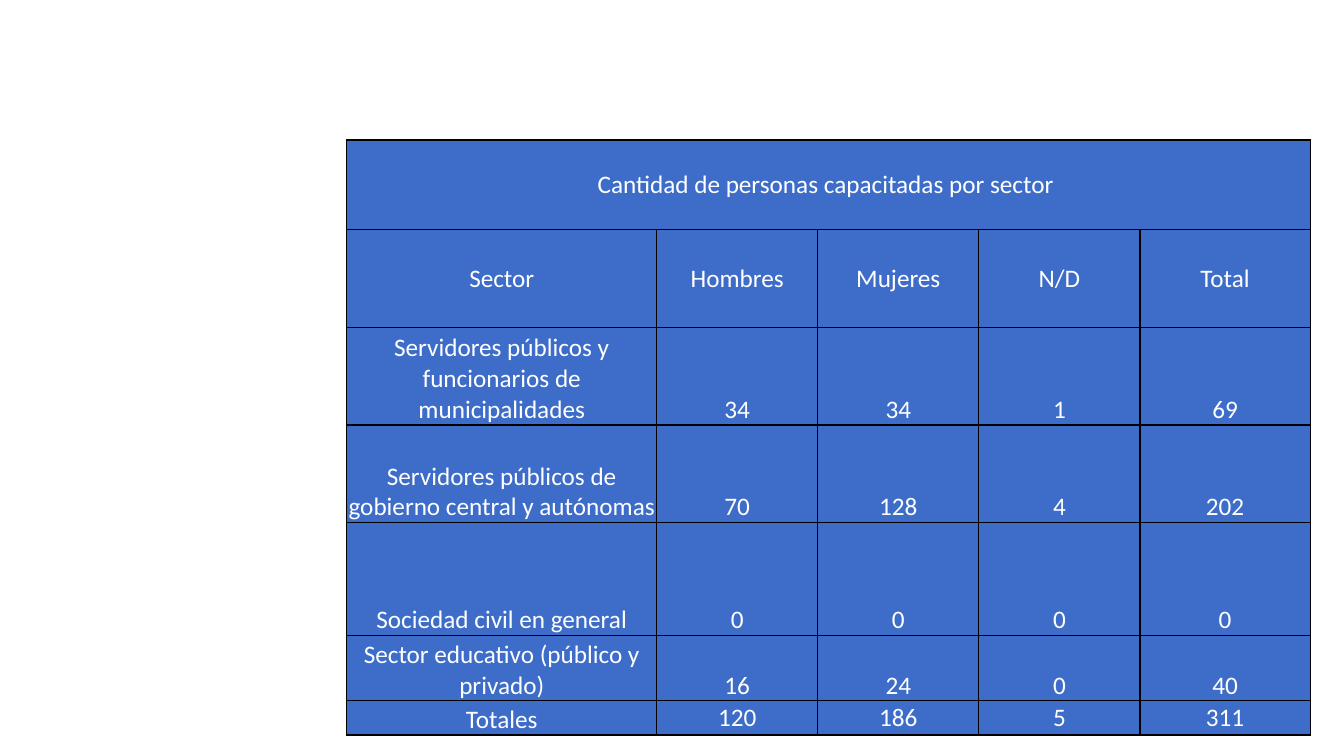
from dataclasses import dataclass

from lxml import etree
from pptx import Presentation
from pptx.dml.color import RGBColor
from pptx.enum import text
from pptx.oxml import ns
from pptx.util import Cm, Pt


@dataclass(frozen=True)
class Theme:
    fill: RGBColor = RGBColor.from_string("3D6DC8")
    ink: RGBColor = RGBColor.from_string("FFFFFF")
    border: str = "000000"
    border_width: Pt = Pt(1)
    font: str = "Calibri"
    size: Pt = Pt(18)


theme = Theme()

HEADING = "Cantidad de personas capacitadas por sector "
ROWS = [
    (HEADING, "", "", "", ""),
    ("Sector", "Hombres", "Mujeres", "N/D", "Total"),
    ("Servidores públicos y funcionarios de municipalidades", 34, 34, 1, 69),
    ("Servidores públicos de gobierno central y autónomas", 70, 128, 4, 202),
    ("Sociedad civil en general", 0, 0, 0, 0),
    ("Sector educativo (público y privado)", 16, 24, 0, 40),
    ("Totales", 120, 186, 5, 311),
]
COLUMN_WIDTHS = [7.81, 4.06, 4.06, 4.06, 4.29]
ROW_HEIGHTS = [2.26, 2.46, 2.46, 2.46, 2.84, 1.65, 0.86]


def add_borders(cell):
    properties = cell._tc.get_or_add_tcPr()
    for side in ("a:lnL", "a:lnR", "a:lnT", "a:lnB"):
        line = etree.SubElement(properties, ns.qn(side), w=str(theme.border_width))
        paint = etree.SubElement(line, ns.qn("a:solidFill"))
        etree.SubElement(paint, ns.qn("a:srgbClr"), val=theme.border)


# Page
deck = Presentation()
deck.slide_width, deck.slide_height = Cm(33.87), Cm(19.05)
page = deck.slides.add_slide(deck.slide_layouts.get_by_name("Blank"))

# Table grid
table = page.shapes.add_table(
    len(ROWS), len(COLUMN_WIDTHS), Cm(8.74), Cm(3.53),
    Cm(sum(COLUMN_WIDTHS)), Cm(sum(ROW_HEIGHTS))).table
table.first_row = table.horz_banding = False
for column, width in zip(table.columns, COLUMN_WIDTHS):
    column.width = Cm(width)
for row, height in zip(table.rows, ROW_HEIGHTS):
    row.height = Cm(height)
table.cell(0, 0).merge(table.cell(0, len(COLUMN_WIDTHS) - 1))

# Cells: headings and the figures of the totals row sit in the middle
last = len(ROWS) - 1
for i, values in enumerate(ROWS):
    for j, value in enumerate(values):
        cell = table.cell(i, j)
        add_borders(cell)
        cell.fill.solid()
        cell.fill.fore_color.rgb = theme.fill
        cell.margin_left = cell.margin_right = cell.margin_top = Cm(0.02)
        cell.margin_bottom = 0
        middle = i < 2 or (i == last and j > 0)
        cell.vertical_anchor = (
            text.MSO_ANCHOR.MIDDLE if middle else text.MSO_ANCHOR.BOTTOM)
        para = cell.text_frame.paragraphs[0]
        para.text = str(value)
        para.alignment = text.PP_ALIGN.CENTER
        para.font.name = theme.font
        para.font.size = theme.size
        para.font.color.rgb = theme.ink

deck.save("out.pptx")
